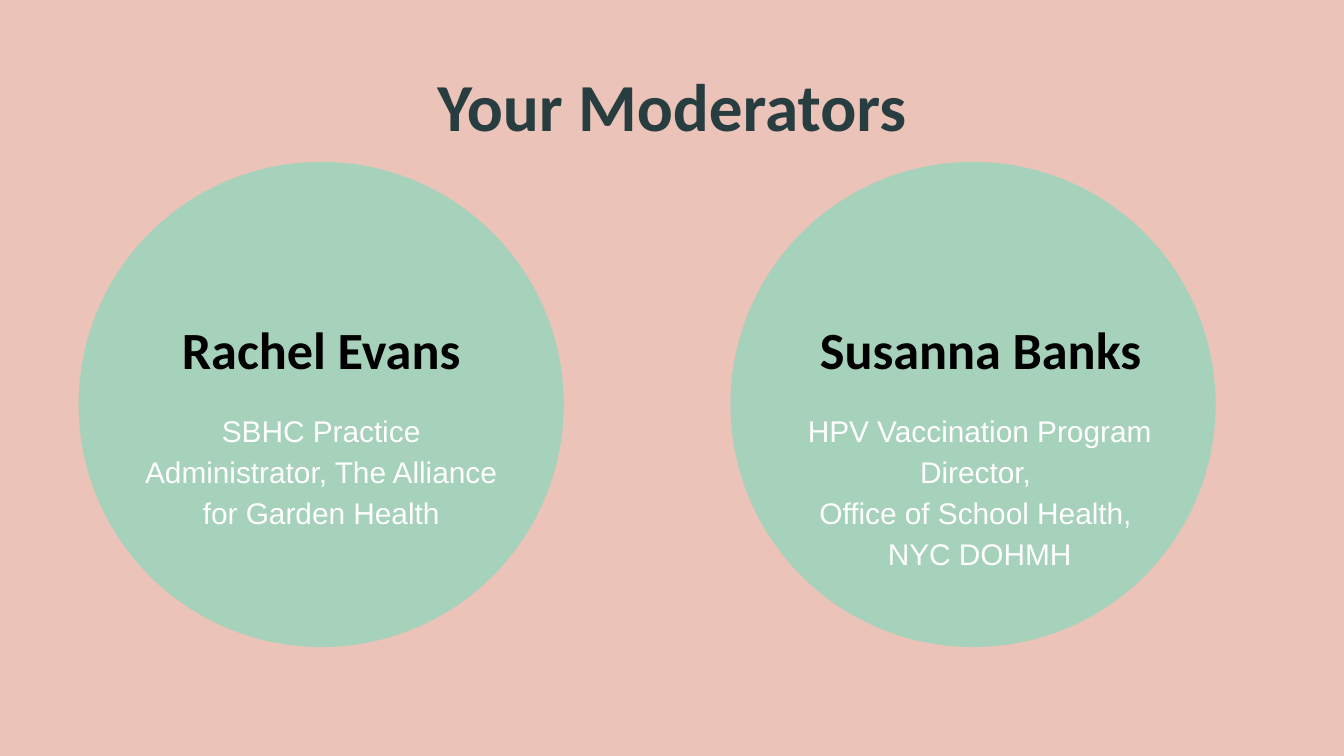
from pptx import Presentation
from pptx import util as u
from pptx.dml.color import RGBColor
from pptx.enum import shapes, text

HUES = {"pink": "EBC3B8", "mint": "A6D1BA", "teal": "273D40",
        "black": "000000", "white": "FFFFFF"}
HEAD = {"name": "Calibri", "size": u.Pt(36), "bold": True}
NAME = {"name": "Calibri", "size": u.Pt(28), "bold": True}
ROLE = {"name": "Arial", "size": u.Pt(16), "bold": False}


def tint(hue):
    return RGBColor.from_string(HUES[hue])


def write(spot, lines, style, hue, anchor=text.MSO_ANCHOR.TOP, gap=1.0):
    """Add a centred text box with one paragraph per line."""
    box = slide.shapes.add_textbox(*map(u.Inches, spot))
    frame = box.text_frame
    frame.word_wrap = True
    frame.vertical_anchor = anchor
    for side in ("left", "top", "right", "bottom"):
        setattr(frame, f"margin_{side}", u.Inches(0.1))
    for i, line in enumerate(lines):
        para = frame.paragraphs[0] if i == 0 else frame.add_paragraph()
        para.alignment = text.PP_ALIGN.CENTER
        para.line_spacing = gap
        run = para.add_run()
        run.text = line
        for key, value in style.items():
            setattr(run.font, key, value)
        run.font.color.rgb = tint(hue)


deck = Presentation()
deck.slide_width = u.Inches(10)
deck.slide_height = deck.slide_width * 9 // 16
slide = deck.slides.add_slide(deck.slide_layouts[6])
slide.background.fill.solid()
slide.background.fill.fore_color.rgb = tint("pink")

for left in (5.44, 0.59):
    disc = slide.shapes.add_shape(
        shapes.MSO_SHAPE.OVAL, *map(u.Inches, (left, 1.21, 3.6, 3.6)))
    disc.shadow.inherit = False
    disc.fill.solid()
    disc.fill.fore_color.rgb = tint("mint")
    disc.line.color.rgb = tint("mint")
    disc.line.width = u.Pt(0.75)

write((0.78, 0.38, 8.44, 0.63), ["Your Moderators"], HEAD, "teal")

# Name left and width; role left and width; wording
people = [
    ((0.96, 2.86), (0.89, 3), "Rachel Evans",
     ["SBHC Practice Administrator, The Alliance for Garden Health"]),
    ((5.8, 2.99), (5.54, 3.5), "Susanna Banks",
     ["HPV Vaccination Program Director, ",
      "Office of School Health, ", "NYC DOHMH"]),
]
for (name_x, name_w), (role_x, role_w), name, role in people:
    write((role_x, 2.93, role_w, 1.22), role, ROLE, "white", gap=1.15)
    write((name_x, 2.51, name_w, 0.42), [name], NAME, "black",
          anchor=text.MSO_ANCHOR.BOTTOM)

deck.save("out.pptx")
